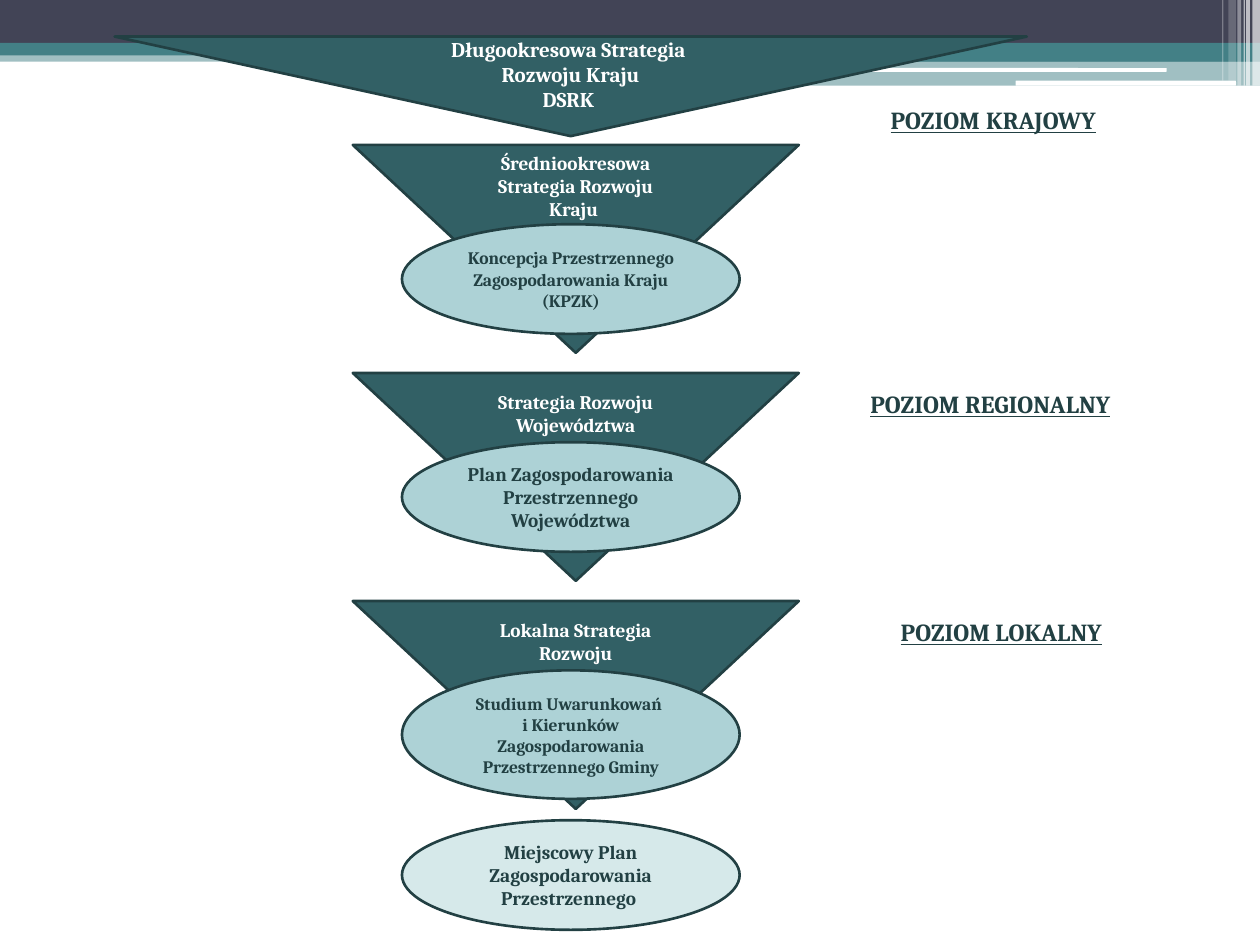
"""Build the slide on levels of strategic and spatial planning in Poland."""
from lxml.etree import SubElement
from pptx import Presentation
from pptx.dml.color import RGBColor
from pptx.enum.shapes import MSO_SHAPE
from pptx.enum.text import MSO_ANCHOR, MSO_AUTO_SIZE, PP_ALIGN
from pptx.oxml.ns import qn
from pptx.util import Inches, Pt

WHITE = RGBColor(0xFF, 0xFF, 0xFF)
NAVY = RGBColor(0x42, 0x44, 0x56)
TEAL = RGBColor(0x43, 0x80, 0x86)
DEEP = RGBColor(0x32, 0x60, 0x65)
INK = RGBColor(0x22, 0x40, 0x43)
AQUA = RGBColor(0xAD, 0xD2, 0xD6)
PALE = RGBColor(0xD6, 0xE9, 0xEA)
FONT = "Cambria"
RECT, ROUND = MSO_SHAPE.RECTANGLE, MSO_SHAPE.ROUNDED_RECTANGLE
MERGE, OVAL = MSO_SHAPE.FLOWCHART_MERGE, MSO_SHAPE.OVAL

BANDS = [
    (RECT, 0, 0.4, 10, 0.09, TEAL, 50),
    (RECT, 0, 0, 10, 0.34, NAVY, 100),
    (RECT, 0, 0.34, 10, 0.1, TEAL, 100),
    (RECT, 5.92, 0.39, 4.08, 0.1, TEAL, 100),
    (RECT, 5.92, 0.48, 4.08, 0.2, TEAL, 50),
    (ROUND, 5.91, 0.54, 3.35, 0.03, WHITE, 100),
    (ROUND, 8.06, 0.64, 1.75, 0.04, WHITE, 100),
]
STRIPES = [
    (9.94, 0.06, 0.68, 65),
    (9.89, 0.03, 0.68, 65),
    (9.87, 0.01, 0.68, 60),
    (9.82, 0.03, 0.68, 40),
    (9.75, 0.06, 0.64, 20),
    (9.7, 0.01, 0.64, 30),
]
TOP = ["Długookresowa Strategia ", "Rozwoju Kraju", "DSRK "]
LEVELS = [
    ("Średniookresowa Strategia Rozwoju Kraju ", 1.78, 0.87, 10,
     ["Koncepcja Przestrzennego Zagospodarowania Kraju (KPZK)"]),
    ("Strategia Rozwoju Województwa", 3.51, 0.87, 11,
     ["Plan Zagospodarowania Przestrzennego Województwa"]),
    ("Lokalna Strategia Rozwoju", 5.32, 1.02, 10,
     ["Studium Uwarunkowań ",
      "i Kierunków Zagospodarowania Przestrzennego Gminy"]),
]
LOCAL_PLAN = ["Miejscowy Plan Zagospodarowania Przestrzennego "]
LABELS = [
    (6.81, 3.04, 2.6, 0.34, [("POZIOM REGIONALNY", 14)]),
    (7.05, 4.85, 2.18, 0.34, [("POZIOM LOKALNY", 14)]),
    (6.97, 0.76, 2.25, 0.37, [("POZIOM", 14), (" ", 16), ("KRAJOWY", 14)]),
]
LEVEL_TOP, LEVEL_STEP = 1.15, 1.81


def add_run(p, text, size, color, underline=None):
    r = p.add_run()
    r.text = text
    r.font.name, r.font.size, r.font.bold = FONT, Pt(size), True
    r.font.color.rgb = color
    r.font.underline = underline


def add_filled(s, kind, x, y, w, h, color, opacity=100):
    sp = s.shapes.add_shape(kind, Inches(x), Inches(y), Inches(w), Inches(h))
    sp.shadow.inherit = False
    sp.fill.solid()
    sp.fill.fore_color.rgb = color
    sp.line.fill.background()
    if opacity < 100:
        clr = sp.fill._xPr.find(qn("a:solidFill"))[0]
        SubElement(clr, qn("a:alpha")).set("val", str(opacity * 1000))
    return sp


def add_node(s, kind, box, fill, paragraphs, size, color, top=0.05, bottom=0.05):
    sp = add_filled(s, kind, *box, fill)
    sp.line.color.rgb = INK
    sp.line.width = Pt(1.5)
    tf = sp.text_frame
    tf.word_wrap = True
    tf.vertical_anchor = MSO_ANCHOR.MIDDLE
    tf.margin_top, tf.margin_bottom = Inches(top), Inches(bottom)
    for i, text in enumerate(paragraphs):
        p = tf.add_paragraph() if i else tf.paragraphs[0]
        p.alignment = PP_ALIGN.CENTER
        add_run(p, text, size, color)


def add_label(s, x, y, w, h, runs):
    sp = s.shapes.add_textbox(Inches(x), Inches(y), Inches(w), Inches(h))
    tf = sp.text_frame
    tf.word_wrap = False
    tf.auto_size = MSO_AUTO_SIZE.SHAPE_TO_FIT_TEXT
    for text, size in runs:
        add_run(tf.paragraphs[0], text, size, INK, True)


def main():
    prs = Presentation()
    prs.slide_width, prs.slide_height = Inches(10), Inches(7.5)
    s = prs.slides.add_slide(prs.slide_layouts[6])
    for band in BANDS:
        add_filled(s, *band)
    for x, w, h, opacity in STRIPES:
        add_filled(s, RECT, x, 0, w, h, WHITE, opacity)
    add_node(s, MERGE, (0.91, 0.29, 7.24, 0.79), DEEP, TOP, 12, WHITE, top=0.25)
    for i, (strategy, y, h, size, plan) in enumerate(LEVELS):
        box = (2.8, LEVEL_TOP + i * LEVEL_STEP, 3.54, 1.65)
        add_node(s, MERGE, box, DEEP, [strategy], 11, WHITE, bottom=0.23)
        add_node(s, OVAL, (3.19, y, 2.68, h), AQUA, plan, size, INK)
    add_node(s, OVAL, (3.19, 6.51, 2.68, 0.87), PALE, LOCAL_PLAN, 11, INK)
    for label in LABELS:
        add_label(s, *label)
    prs.save("out.pptx")


if __name__ == "__main__":
    main()
